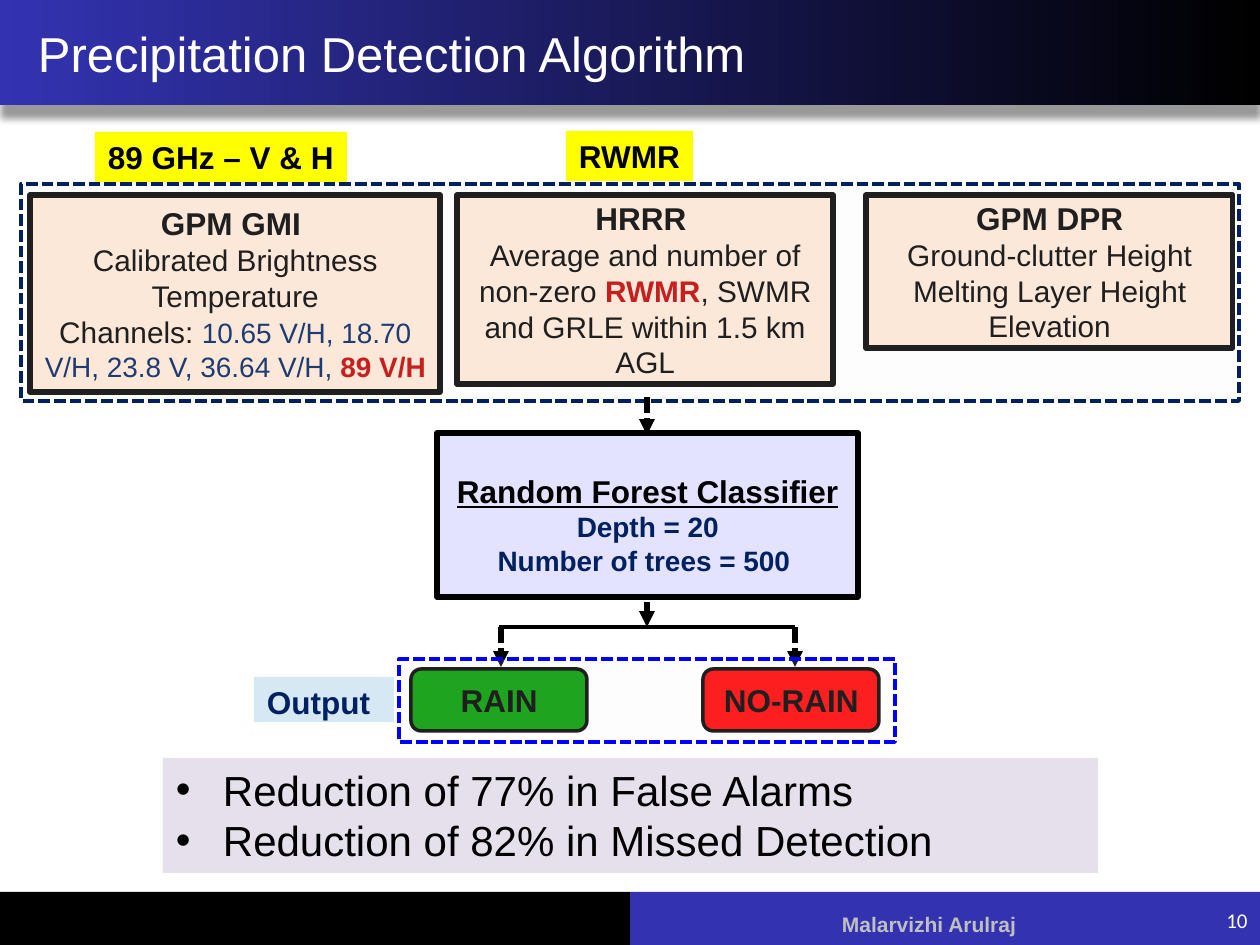
from dataclasses import dataclass
from typing import Optional

from pptx import Presentation
from pptx.dml.color import RGBColor
from pptx.enum.dml import MSO_LINE_DASH_STYLE as Dash
from pptx.enum.shapes import MSO_CONNECTOR, MSO_SHAPE as Preset
from pptx.enum.text import MSO_ANCHOR as Anchor, PP_ALIGN as Align
from pptx.oxml import parse_xml
from pptx.oxml.ns import nsdecls, qn
from pptx.util import Emu, Pt
from lxml.etree import SubElement

EMU_PER_PX = 914400 / 126
WIDTH, HEIGHT = 1260, 945

BLACK = RGBColor(0x00, 0x00, 0x00)
WHITE = RGBColor(0xFF, 0xFF, 0xFF)
THEME_BLUE = RGBColor(0x33, 0x33, 0xB2)
SILVER = RGBColor(0xBF, 0xBF, 0xBF)
YELLOW = RGBColor(0xFF, 0xFF, 0x00)
LILAC = RGBColor(0xE6, 0xE0, 0xEC)
PEACH = RGBColor(0xFA, 0xC0, 0x90)
BLUE = RGBColor(0x00, 0x00, 0xFF)
NAVY = RGBColor(0x00, 0x20, 0x60)
SKY = RGBColor(0x00, 0x70, 0xC0)
DARK_RED = RGBColor(0xC0, 0x00, 0x00)
RED = RGBColor(0xFF, 0x00, 0x00)
GREEN = RGBColor(0x00, 0x99, 0x00)
PALE_GRAY = RGBColor(0xF2, 0xF2, 0xF2)


@dataclass(frozen=True)
class Span:
    text: str
    size: Optional[int] = None
    color: Optional[RGBColor] = None
    bold: Optional[bool] = None


@dataclass(frozen=True)
class Para:
    spans: tuple[Span, ...]
    size: int = 18
    color: RGBColor = BLACK
    bold: bool = False
    underline: bool = False
    align: Align = Align.CENTER
    spacing: Optional[float] = None
    bullet: bool = False
    font: str = "Arial"


@dataclass(frozen=True)
class Box:
    left: int
    top: int
    width: int
    height: int
    fill: Optional[RGBColor] = None
    alpha: int = 100
    line: Optional[RGBColor] = None
    weight: float = 3
    dashed: bool = False
    preset: Preset = Preset.RECTANGLE
    paras: tuple[Para, ...] = ()
    anchor: Anchor = Anchor.MIDDLE
    wrap: bool = True
    inset: int = 13


@dataclass(frozen=True)
class Link:
    start: tuple[int, int]
    end: tuple[int, int]
    arrow: bool = True


def px(length: float) -> Emu:
    return Emu(round(length * EMU_PER_PX))


def para(text: str, **style) -> Para:
    return Para((Span(text),), **style)


def heading(text: str, **style) -> Para:
    return para(text, bold=True, **style)


def write(frame, box: Box) -> None:
    frame.word_wrap = box.wrap
    frame.vertical_anchor = box.anchor
    frame.margin_left = px(box.inset)
    for index, item in enumerate(box.paras):
        paragraph = frame.paragraphs[0] if index == 0 else frame.add_paragraph()
        paragraph.alignment = item.align
        if item.spacing:
            paragraph.line_spacing = item.spacing
        if item.bullet:
            props = paragraph._p.get_or_add_pPr()
            props.set("marL", str(px(47)))
            props.set("indent", str(px(-47)))
            SubElement(props, qn("a:buFont")).set("typeface", "Arial")
            SubElement(props, qn("a:buChar")).set("char", "•")
        font = paragraph.font
        font.name, font.size = item.font, Pt(item.size)
        font.bold, font.underline = item.bold, item.underline
        font.color.rgb = item.color
        for span in item.spans:
            run = paragraph.add_run()
            run.text = span.text
            if span.size:
                run.font.size = Pt(span.size)
            if span.color is not None:
                run.font.color.rgb = span.color
            if span.bold is not None:
                run.font.bold = span.bold


def draw_box(shapes, box: Box):
    place = px(box.left), px(box.top), px(box.width), px(box.height)
    if box.fill is None:
        shape = shapes.add_textbox(*place)
    else:
        shape = shapes.add_shape(box.preset, *place)
        shape.shadow.inherit = False
        shape.fill.solid()
        shape.fill.fore_color.rgb = box.fill
        if box.alpha < 100:
            color = shape.fill._xPr.find(".//" + qn("a:srgbClr"))
            SubElement(color, qn("a:alpha")).set("val", str(box.alpha * 1000))
        if box.line is None:
            shape.line.fill.background()
        else:
            shape.line.color.rgb = box.line
            shape.line.width = Pt(box.weight)
            if box.dashed:
                shape.line.dash_style = Dash.SQUARE_DOT
    if box.paras:
        write(shape.text_frame, box)
    return shape


def draw_link(shapes, link: Link) -> None:
    ends = (px(value) for value in link.start + link.end)
    connector = shapes.add_connector(MSO_CONNECTOR.STRAIGHT, *ends)
    connector.line.color.rgb = BLACK
    connector.line.width = Pt(3 if link.arrow else 2.25)
    if link.arrow:
        connector.line.dash_style = Dash.SQUARE_DOT
        SubElement(connector.line._ln, qn("a:tailEnd")).set("type", "triangle")
    SubElement(connector._element.spPr, qn("a:effectLst"))


def draw_header(shapes) -> None:
    band = draw_box(shapes, Box(0, 0, WIDTH, 105, THEME_BLUE))
    band.fill.gradient()
    band.fill.gradient_angle = 180
    for stop, color in zip(band.fill.gradient_stops, (BLACK, THEME_BLUE)):
        stop.color.rgb = color
    effects = band._element.spPr.find(qn("a:effectLst"))
    effects.append(parse_xml(
        f'<a:outerShdw {nsdecls("a")} blurRad="{Pt(4)}" dist="{Pt(7)}" dir="5400000" '
        'algn="t" rotWithShape="0"><a:srgbClr val="000000"><a:alpha val="40000"/>'
        '</a:srgbClr></a:outerShdw>'))
    title = para("Precipitation Detection Algorithm", size=28, color=WHITE, align=Align.LEFT)
    draw_box(shapes, Box(0, 0, 1229, 105, paras=(title,), inset=38))


def source_box(left: int, width: int, height: int, *paras: Para) -> Box:
    return Box(left, 195, width, height, PEACH, 37, BLACK, paras=paras)


def label(left: int, top: int, width: int, height: int, text: str, fill: RGBColor,
          color: RGBColor = BLACK, alpha: int = 100, wrap: bool = False) -> Box:
    return Box(left, top, width, height, fill, alpha, anchor=Anchor.TOP, wrap=wrap,
               paras=(heading(text, color=color, align=Align.LEFT),))


def outcome(left: int, text: str, fill: RGBColor) -> Box:
    return Box(left, 669, 176, 62, fill, line=BLACK, weight=2,
               preset=Preset.ROUNDED_RECTANGLE, paras=(heading(text),))


def dashed_frame(left: int, top: int, width: int, height: int, line: RGBColor) -> Box:
    return Box(left, top, width, height, PALE_GRAY, 13, line, 2.25, True)


FINDINGS = tuple(para(f"Reduction of {text}", size=24, align=Align.LEFT, bullet=True)
                 for text in ("77% in False Alarms", "82% in Missed Detection"))
DPR_INPUTS = tuple(para(text, size=17) for text in
                   ("Ground-clutter Height", "Melting Layer Height", "Elevation"))
HRRR_INPUTS = Para((Span("Average and number of non-zero "), Span("RWMR", color=DARK_RED, bold=True),
                    Span(", SWMR and GRLE within 1.5 km AGL")), size=17)
GMI_CHANNELS = Para((Span("Channels: "),
                     Span("10.65 V/H, 18.70 V/H, 23.8 V, 36.64 V/H, ", 16, NAVY),
                     Span("89 V/H", 16, DARK_RED, True)), size=17)
SETTINGS = tuple(heading(text, size=16, color=NAVY)
                 for text in ("Depth = 20", "Number of trees = 500 "))

BOXES = (
    Box(630, 892, 630, 53, THEME_BLUE),
    Box(0, 892, 630, 53, BLACK),
    Box(829, 905, 202, 38, anchor=Anchor.TOP, wrap=False,
        paras=(heading("Malarvizhi Arulraj", size=12, color=SILVER, align=Align.LEFT),)),
    Box(1113, 895, 147, 50,
        paras=(para("10", size=12, color=WHITE, align=Align.RIGHT, font="Calibri"),)),
    label(95, 132, 252, 50, "89 GHz – V & H", YELLOW),
    label(566, 131, 127, 50, "RWMR", YELLOW),
    Box(163, 758, 935, 115, LILAC, paras=FINDINGS, anchor=Anchor.TOP),
    source_box(457, 376, 189, heading("HRRR "), HRRR_INPUTS),
    source_box(866, 367, 153, heading("GPM DPR"), *DPR_INPUTS),
    source_box(30, 410, 197, heading("GPM GMI "),
               para("Calibrated Brightness Temperature", size=17), GMI_CHANNELS),
    Box(437, 433, 421, 164, BLUE, 11, BLACK,
        paras=(heading("Random Forest Classifier", underline=True, spacing=1.5), *SETTINGS)),
    dashed_frame(21, 184, 1218, 217, NAVY),
    outcome(411, "RAIN", GREEN),
    outcome(703, "NO-RAIN", RED),
)
LINKS = (
    Link((647, 397), (647, 435)),
    Link((647, 602), (647, 627)),
    Link((499, 627), (795, 627), arrow=False),
    Link((501, 627), (501, 667)),
    Link((795, 627), (795, 667)),
)
OUTPUT = (dashed_frame(399, 659, 496, 83, BLUE),
          label(254, 677, 140, 45, "Output", SKY, NAVY, 16, True))


def main() -> None:
    deck = Presentation()
    deck.slide_width, deck.slide_height = px(WIDTH), px(HEIGHT)
    shapes = deck.slides.add_slide(deck.slide_layouts[6]).shapes
    draw_header(shapes)
    for box in BOXES:
        draw_box(shapes, box)
    for link in LINKS:
        draw_link(shapes, link)
    for box in OUTPUT:
        draw_box(shapes, box)
    deck.save("out.pptx")


if __name__ == "__main__":
    main()
